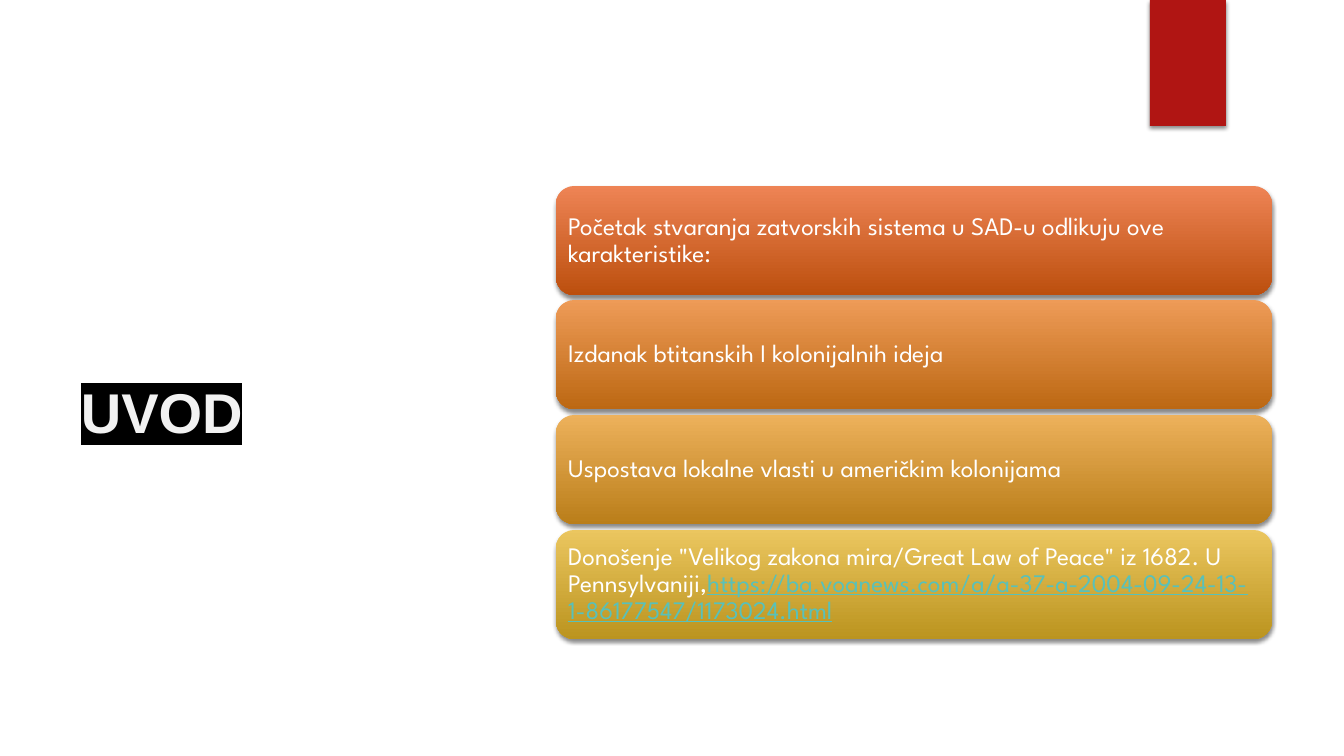
from dataclasses import dataclass

import lxml.etree
import pptx
import pptx.dml.color
import pptx.enum.shapes
import pptx.enum.text
import pptx.oxml
import pptx.oxml.ns
import pptx.shapes.autoshape
import pptx.slide
import pptx.text.text
import pptx.util

EMU_PER_PX = 914400 / 100.8
CARD_FONT = "League Spartan"
CARD_LEFT, CARDS_TOP, CARD_WIDTH, CARD_HEIGHT = 556, 186, 716, 109
LAST_CARD_OFFSET = 344
CARD_INSET = 7


@dataclass(frozen=True)
class Card:
    text: str
    top_color: str
    bottom_color: str
    link: str = ""


CARDS = [
    Card("Početak stvaranja zatvorskih sistema u SAD-u odlikuju ove karakteristike:",
         "EE8455", "BC4F0E"),
    Card("Izdanak btitanskih I kolonijalnih ideja", "EE9B57", "BC6813"),
    Card("Uspostava lokalne vlasti u američkim kolonijama", "EDB15B", "BA7E1A"),
    Card('Donošenje "Velikog zakona mira/Great Law of Peace" iz 1682. U Pennsylvaniji,',
         "EBC65F", "BB941F",
         "https://ba.voanews.com/a/a-37-a-2004-09-24-13-1-86177547/1173024.html"),
]


def px(length: int) -> pptx.util.Emu:
    return pptx.util.Emu(round(length * EMU_PER_PX))


def color(value: str) -> pptx.dml.color.RGBColor:
    return pptx.dml.color.RGBColor.from_string(value)


def format_run(run: pptx.text.text._Run, font: str, size: int, value: str) -> None:
    run.font.name = font
    run.font.size = pptx.util.Pt(size)
    run.font.color.rgb = color(value)


def add_shadowed_shape(
    slide: pptx.slide.Slide, kind: pptx.enum.shapes.MSO_SHAPE,
    left: int, top: int, width: int, height: int,
) -> pptx.shapes.autoshape.Shape:
    """Add a borderless shape with a soft shadow below it."""
    shape = slide.shapes.add_shape(kind, px(left), px(top), px(width), px(height))
    shape.line.fill.background()
    shape.shadow.inherit = False
    effects = shape._element.spPr.find(pptx.oxml.ns.qn("a:effectLst"))
    effects.append(pptx.oxml.parse_xml(
        f'<a:outerShdw {pptx.oxml.ns.nsdecls("a")} blurRad="38100" dist="25400" '
        'dir="5400000" rotWithShape="0"><a:srgbClr val="000000">'
        '<a:alpha val="45000"/></a:srgbClr></a:outerShdw>'))
    return shape


def add_ribbon(slide: pptx.slide.Slide) -> None:
    ribbon = add_shadowed_shape(
        slide, pptx.enum.shapes.MSO_SHAPE.RECTANGLE, 1150, 0, 76, 126)
    ribbon.fill.solid()
    ribbon.fill.fore_color.rgb = color("B01513")


def add_title(slide: pptx.slide.Slide) -> None:
    title = slide.shapes.add_textbox(px(71), px(159), px(343), px(504))
    frame = title.text_frame
    frame.word_wrap = True
    frame.vertical_anchor = pptx.enum.text.MSO_ANCHOR.MIDDLE
    frame.text = "UVOD"
    run = frame.paragraphs[0].runs[0]
    format_run(run, "Arial", 40, "F2F2F2")
    run.font.bold = True
    highlight = pptx.oxml.parse_xml(
        f'<a:highlight {pptx.oxml.ns.nsdecls("a")}><a:srgbClr val="000000"/></a:highlight>')
    run.font._element.find(pptx.oxml.ns.qn("a:solidFill")).addnext(highlight)


def add_card(slide: pptx.slide.Slide, card: Card, top: int) -> None:
    shape = add_shadowed_shape(
        slide, pptx.enum.shapes.MSO_SHAPE.ROUNDED_RECTANGLE,
        CARD_LEFT, top, CARD_WIDTH, CARD_HEIGHT)
    shape.fill.gradient()
    shape.fill.gradient_angle = 270
    stops = zip(shape.fill.gradient_stops, (card.top_color, card.bottom_color))
    for position, (stop, value) in enumerate(stops):
        stop.position = position
        stop.color.rgb = color(value)

    frame = shape.text_frame
    frame.word_wrap = True
    frame.vertical_anchor = pptx.enum.text.MSO_ANCHOR.MIDDLE
    frame.margin_left = frame.margin_right = px(CARD_INSET)
    frame.margin_top = frame.margin_bottom = px(CARD_INSET)
    frame.text = card.text
    paragraph = frame.paragraphs[0]
    paragraph.alignment = pptx.enum.text.PP_ALIGN.LEFT
    paragraph.line_spacing = 0.9
    format_run(paragraph.runs[0], CARD_FONT, 18, "FFFFFF")
    if card.link:
        link = paragraph.add_run()
        link.text = card.link
        format_run(link, CARD_FONT, 18, "58C1BA")
        link.font.underline = True


def main() -> None:
    presentation = pptx.Presentation()
    presentation.slide_width = px(1344)
    presentation.slide_height = px(756)
    slide = presentation.slides.add_slide(presentation.slide_layouts[6])
    add_ribbon(slide)
    add_title(slide)
    for index, card in enumerate(CARDS):
        add_card(slide, card, CARDS_TOP + index * LAST_CARD_OFFSET // (len(CARDS) - 1))
    presentation.save("out.pptx")


if __name__ == "__main__":
    main()
